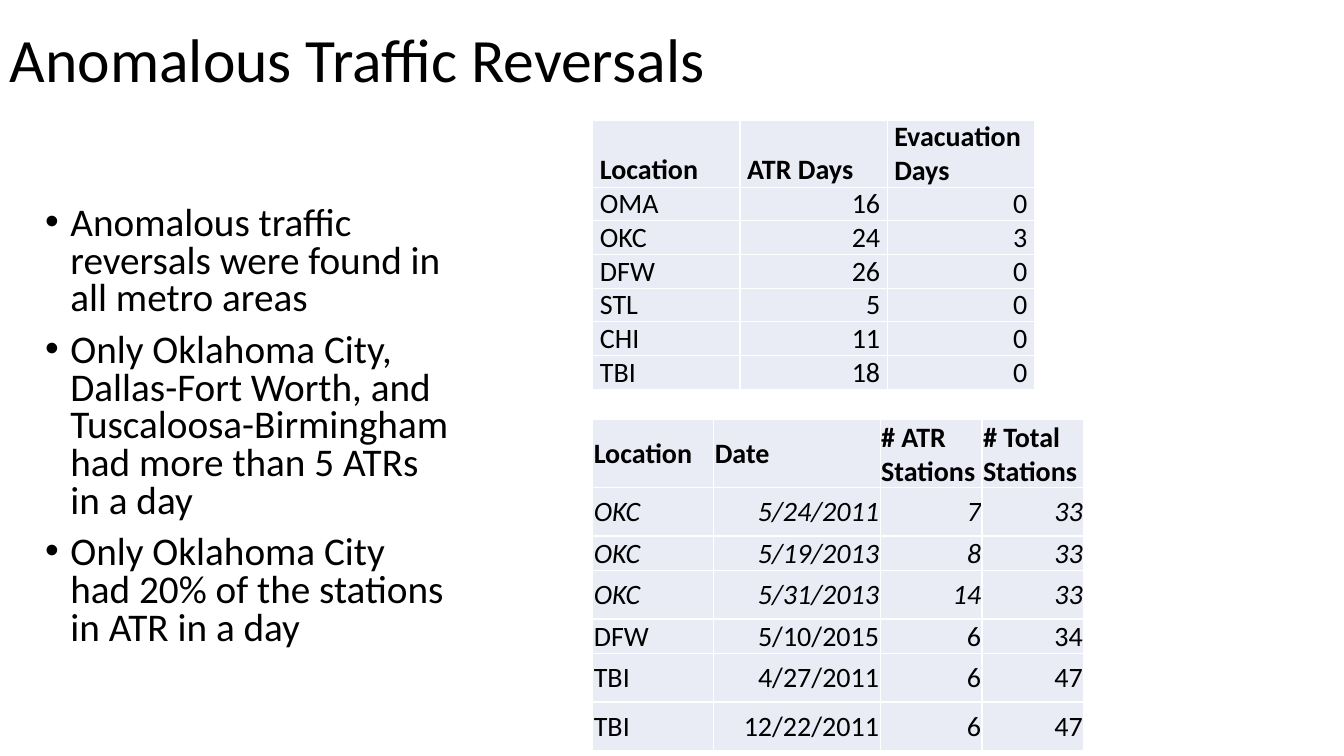
from lxml import etree
from pptx import Presentation
from pptx.dml.color import RGBColor
from pptx.enum import text
from pptx.oxml import ns
from pptx.util import Inches, Pt

HUES = {"ink": "000000", "cell": "E9EBF5", "rule": "FFFFFF"}
FACE = "Calibri"

DAYS = [
    ("Location", "ATR Days", "Evacuation Days"),
    ("OMA", "16", "0"),
    ("OKC", "24", "3"),
    ("DFW", "26", "0"),
    ("STL", "5", "0"),
    ("CHI", "11", "0"),
    ("TBI", "18", "0"),
]
EVENTS = [
    ("Location", "Date", "# ATR Stations", "# Total Stations"),
    ("OKC", "5/24/2011", "7", "33"),
    ("OKC", "5/19/2013", "8", "33"),
    ("OKC", "5/31/2013", "14", "33"),
    ("DFW", "5/10/2015", "6", "34"),
    ("TBI", "4/27/2011", "6", "47"),
    ("TBI", "12/22/2011", "6", "47"),
]
POINTS = [
    "Anomalous traffic reversals were found in all metro areas",
    "Only Oklahoma City, Dallas-Fort Worth, and Tuscaloosa-Birmingham "
    "had more than 5 ATRs in a day",
    "Only Oklahoma City had 20% of the stations in ATR in a day",
]


def hue(name):
    return RGBColor.from_string(HUES[name])


def style(para, size, bold=False, slant=False):
    font = para.font
    font.name, font.size = FACE, Pt(size)
    font.bold, font.italic = bold, slant
    font.color.rgb = hue("ink")


def add_frame(slide, box):
    frame = slide.shapes.add_textbox(*map(Inches, box)).text_frame
    frame.word_wrap = True
    return frame


def add_title(slide, box, words):
    frame = add_frame(slide, box)
    frame.vertical_anchor = text.MSO_ANCHOR.MIDDLE
    para = frame.paragraphs[0]
    para.text = words
    para.line_spacing = 0.9
    style(para, 44)


def add_points(slide, box, points):
    frame = add_frame(slide, box)
    for i, point in enumerate(points):
        para = frame.add_paragraph() if i else frame.paragraphs[0]
        para.text = point
        para.line_spacing = 0.8
        para.space_before = Pt(10 if i else 0)
        props = para._p.get_or_add_pPr()
        props.set("marL", str(Inches(0.25)))
        props.set("indent", str(Inches(-0.25)))
        etree.SubElement(props, ns.qn("a:buFont"), typeface="Arial")
        etree.SubElement(props, ns.qn("a:buChar"), char="•")
        style(para, 28)


def add_rules(cell):
    """Draw a thin line on all four sides of a cell."""
    props = cell._tc.get_or_add_tcPr()
    for side in ("lnL", "lnR", "lnT", "lnB"):
        line = etree.SubElement(props, ns.qn("a:" + side), w=str(Pt(1)))
        fill = etree.SubElement(line, ns.qn("a:solidFill"))
        etree.SubElement(fill, ns.qn("a:srgbClr"), val=HUES["rule"])


def add_grid(slide, box, data, cols, rows, anchor, pads, slanted=()):
    """Place a table; pads are left, top, right and bottom cell margins."""
    grid = slide.shapes.add_table(len(rows), len(cols), *map(Inches, box)).table
    for col, width in zip(grid.columns, cols):
        col.width = Inches(width)
    for r, (row, height) in enumerate(zip(data, rows)):
        grid.rows[r].height = Inches(height)
        for c, words in enumerate(row):
            cell = grid.cell(r, c)
            add_rules(cell)
            cell.fill.solid()
            cell.fill.fore_color.rgb = hue("cell")
            cell.vertical_anchor = anchor
            (cell.margin_left, cell.margin_top,
             cell.margin_right, cell.margin_bottom) = map(Inches, pads)
            para = cell.text_frame.paragraphs[0]
            para.text = words
            if r and c:
                para.alignment = text.PP_ALIGN.RIGHT
            style(para, 20, bold=r == 0, slant=r in slanted)


def main():
    deck = Presentation()
    deck.slide_width, deck.slide_height = Inches(13.33), Inches(7.5)
    slide = deck.slides.add_slide(deck.slide_layouts[6])
    add_title(slide, (0, 0.05, 7.97, 1.14), "Anomalous Traffic Reversals")
    add_points(slide, (0.35, 2, 4.21, 4.76), POINTS)
    add_grid(slide, (5.88, 1.19, 4.39, 2.67), DAYS,
             [1.46] * 3, [0.2] + [0.24] * 6,
             text.MSO_ANCHOR.BOTTOM, (0.07, 0, 0.07, 0))
    add_grid(slide, (5.88, 4.16, 4.86, 3.29), EVENTS,
             [1.2, 1.65, 1.01, 1.01], [0.63, 0.48, 0.32, 0.48, 0.32, 0.48, 0.48],
             text.MSO_ANCHOR.MIDDLE, (0.01, 0.01, 0.01, 0), slanted=(1, 2, 3))
    deck.save("out.pptx")


if __name__ == "__main__":
    main()
